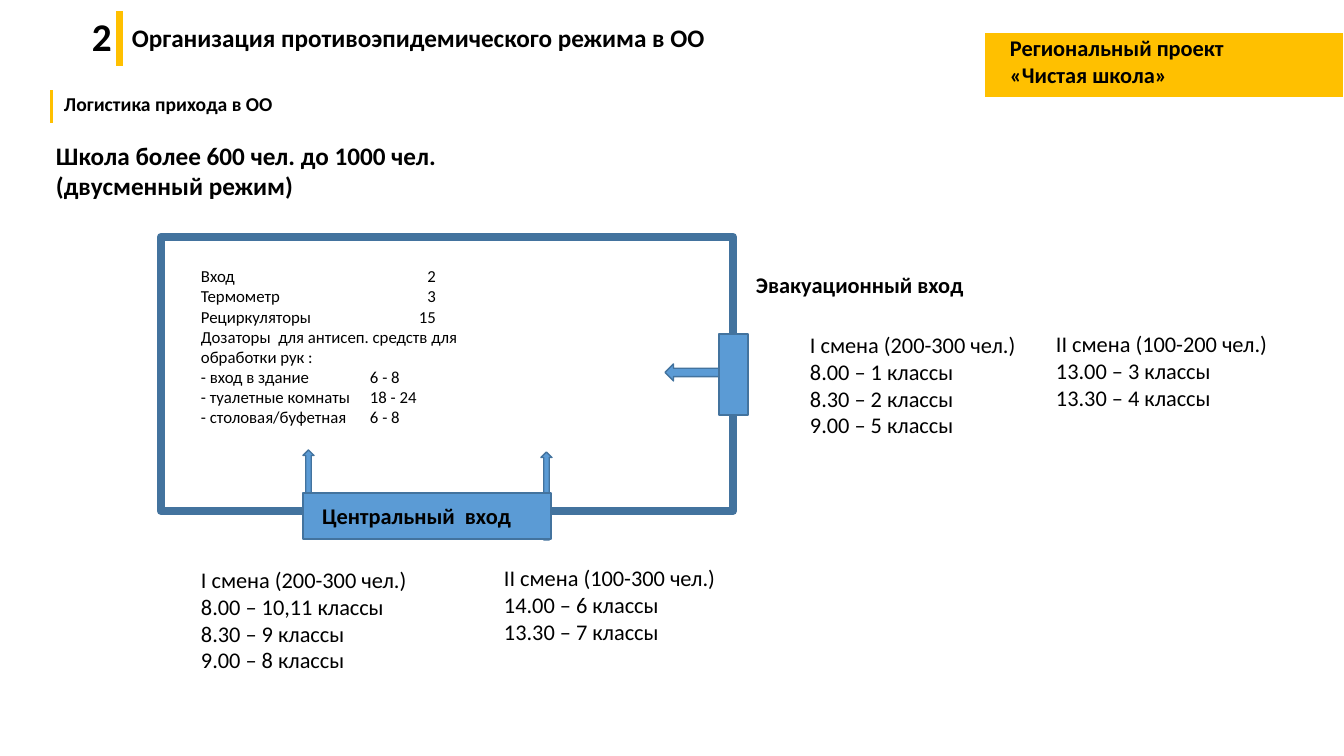
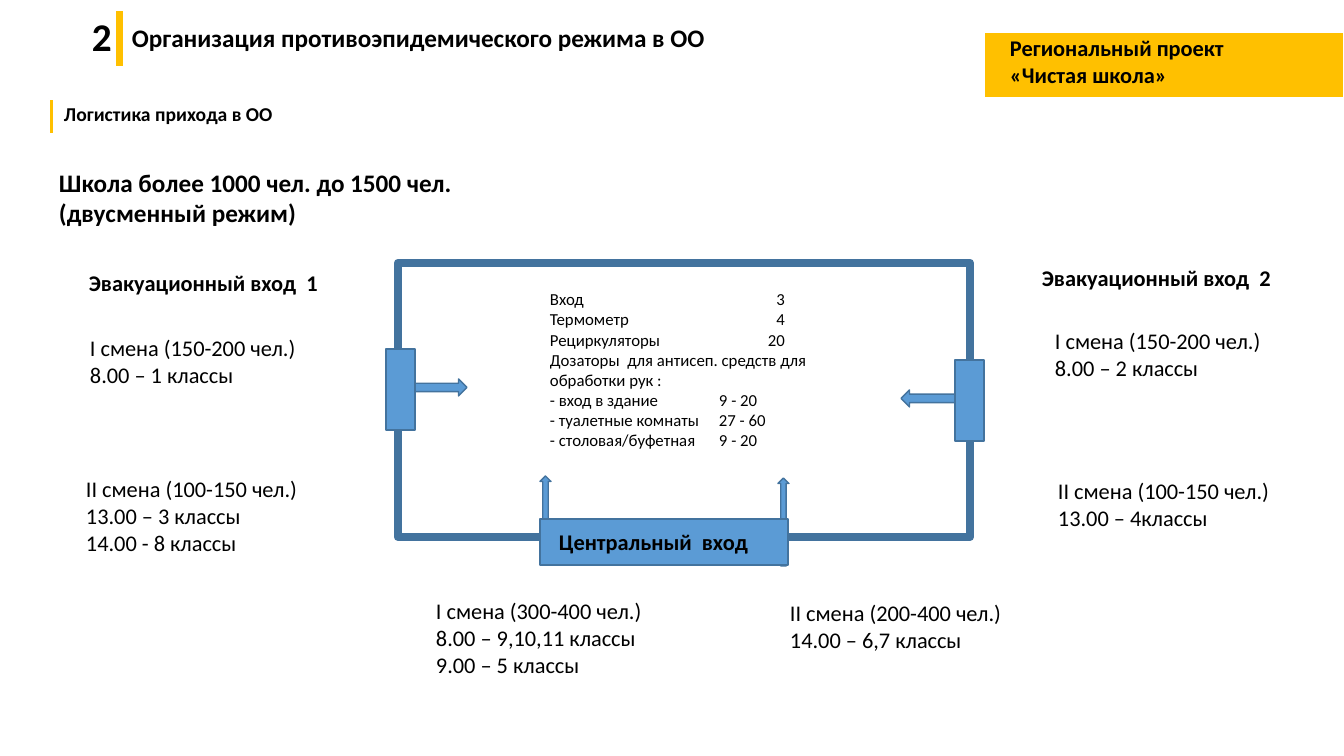
from lxml import etree
from pptx import Presentation
from pptx.dml.color import RGBColor
from pptx.enum.shapes import MSO_SHAPE
from pptx.enum.text import MSO_ANCHOR, PP_ALIGN
from pptx.oxml.ns import qn
from pptx.util import Emu, Pt

PX = 914400 / 100.8
WIDTH, HEIGHT = 1344, 756
RECT = MSO_SHAPE.RECTANGLE
UP, LEFT, RIGHT = MSO_SHAPE.UP_ARROW, MSO_SHAPE.LEFT_ARROW, MSO_SHAPE.RIGHT_ARROW
TOP, MIDDLE = MSO_ANCHOR.TOP, MSO_ANCHOR.MIDDLE
ALIGN_LEFT = PP_ALIGN.LEFT
FONT = "Calibri"
COLORS = {"white": "FFFFFF", "text": "000000", "accent": "FFC000",
          "blue": "5B9BD5", "outline": "43739E"}


def px(n):
    return Emu(round(n * PX))


def color(name):
    return RGBColor.from_string(COLORS[name])


class Deck:
    """Shared style and the slide being built."""

    def __init__(self):
        self.prs = Presentation()
        self.prs.slide_width, self.prs.slide_height = px(WIDTH), px(HEIGHT)
        self.slide = None

    def new_slide(self, subtitle_y):
        """Add a slide with the header and the section subtitle."""
        self.slide = self.prs.slides.add_slide(self.prs.slide_layouts[6])
        badge = self.box(RECT, 984, 32, WIDTH - 984, 66, "accent", "white", 1.5)
        self.fill_text(badge, ["Региональный проект", "«Чистая школа»"],
                       16, True, TOP, 26, 2)
        self.text(122, 17, 611, ["Организация противоэпидемического режима в ОО"],
                  18, True)
        self.box(RECT, 115, 10, 9, 57, "accent", "white", 1.5)
        self.text(82, 7, 44, ["2"], 28, True)
        self.box(RECT, 49, subtitle_y, 5, 35, "accent", "white", 1.5)
        self.text(54, subtitle_y - 2, 267, ["Логистика прихода в ОО"], 14, True)

    def box(self, kind, x, y, w, h, fill="blue", line="outline", weight=1):
        sp = self.slide.shapes.add_shape(kind, px(x), px(y), px(w), px(h))
        sp.shadow.inherit = False
        sp.fill.solid()
        sp.fill.fore_color.rgb = color(fill)
        sp.line.color.rgb = color(line)
        sp.line.width = Pt(weight)
        return sp

    def fill_text(self, sp, lines, size, bold, anchor=TOP, left=10, top=5):
        tf = sp.text_frame
        tf.word_wrap = True
        tf.vertical_anchor = anchor
        tf.margin_left, tf.margin_top = px(left), px(top)
        for i, line in enumerate(lines):
            p = tf.add_paragraph() if i else tf.paragraphs[0]
            p.text = line
            p.alignment = ALIGN_LEFT
            for r in p.runs:
                r.font.name = FONT
                r.font.size = Pt(size)
                r.font.bold = bold
                r.font.color.rgb = color("text")

    def text(self, x, y, w, lines, size=16, bold=False):
        h = round(len(lines) * size * 1.7) + 10
        sp = self.slide.shapes.add_textbox(px(x), px(y), px(w), px(h))
        self.fill_text(sp, lines, size, bold)
        return sp

    def building(self, x, y):
        """Draw the walls and the central entrance."""
        self.box(RECT, x, y, 572, 274, "white", "outline", 6)
        for dx, dy in ((142, 213), (380, 215)):
            self.box(UP, x + dx, y + dy, 11, 88)
        entrance = self.box(RECT, x + 142, y + 256, 248, 46)
        self.fill_text(entrance, ["Центральный  вход"], 16, True, MIDDLE, 19)

    def side_door(self, x, y, arrow):
        """Draw a door whose arrow points into the building."""
        arrow_x = x if arrow == RIGHT else x - 54
        self.box(arrow, arrow_x, y + 30, 81, 17)
        self.box(RECT, x, y, 29, 81)

    def equipment(self, x, y, counts, dispensers):
        """List the equipment, with the numbers set on tab stops."""
        names = ("Вход", "Термометр", "Рециркуляторы")
        places = ("- вход в здание", "- туалетные комнаты", "- столовая/буфетная")
        lines = [f"{name}\t{n}" for name, n in zip(names, counts)]
        lines.append("Дозаторы  для антисеп. средств для обработки рук :")
        lines += [f"{place}\t{n}" for place, n in zip(places, dispensers)]
        sp = self.text(x, y, 327, lines, 12)
        for i, p in enumerate(sp.text_frame.paragraphs):
            pos, align = (235, "r") if i < len(names) else (169, "l")
            tabs = etree.SubElement(p._p.get_or_add_pPr(), qn("a:tabLst"))
            etree.SubElement(tabs, qn("a:tab"), pos=str(px(pos)), algn=align)

    def shifts(self, *blocks):
        """Place timetables given as (x, y, lines)."""
        for x, y, lines in blocks:
            self.text(x, y, 242, lines)


def two_entrances(deck):
    deck.new_slide(89)
    deck.text(46, 135, 448, ["Школа более 600 чел. до 1000 чел.",
                             "(двусменный режим)"], 18, True)
    deck.building(161, 237)
    deck.side_door(719, 334, LEFT)
    deck.equipment(191, 261, (2, 3, 15), ("6 - 8", "18 - 24", "6 - 8"))
    deck.text(746, 266, 238, ["Эвакуационный вход"], 16, True)
    deck.shifts(
        (800, 326, ["I смена (200-300 чел.)", "8.00 – 1 классы",
                    "8.30 – 2 классы", "9.00 – 5 классы"]),
        (1046, 325, ["II смена (100-200 чел.)", "13.00 – 3 классы",
                     "13.30 – 4 классы"]),
        (191, 561, ["I смена (200-300 чел.)", "8.00 – 10,11 классы",
                    "8.30 – 9 классы", "9.00 – 8 классы"]),
        (494, 559, ["II смена (100-300 чел.)", "14.00 – 6 классы",
                    "13.30 – 7 классы"]),
    )


def three_entrances(deck):
    deck.new_slide(99)
    deck.text(49, 162, 569, ["Школа более 1000 чел. до 1500 чел.",
                             "(двусменный режим)"], 18, True)
    deck.building(398, 263)
    deck.side_door(386, 349, RIGHT)
    deck.side_door(955, 360, LEFT)
    deck.equipment(540, 284, (3, 4, 20), ("9 - 20", "27 - 60", "9 - 20"))
    deck.text(79, 264, 279, ["Эвакуационный вход  1"], 16, True)
    deck.text(1032, 259, 279, ["Эвакуационный вход  2"], 16, True)
    deck.shifts(
        (80, 329, ["I смена (150-200 чел.)", "8.00 – 1 классы"]),
        (76, 470, ["II смена (100-150 чел.)", "13.00 – 3 классы",
                   "14.00 - 8 классы"]),
        (1045, 322, ["I смена (150-200 чел.)", "8.00 – 2 классы"]),
        (1048, 472, ["II смена (100-150 чел.)", "13.00 – 4классы"]),
        (426, 592, ["I смена (300-400 чел.)", "8.00 – 9,10,11 классы",
                    "9.00 – 5 классы"]),
        (780, 594, ["II смена (200-400 чел.)", "14.00 – 6,7 классы"]),
    )


def main():
    deck = Deck()
    two_entrances(deck)
    three_entrances(deck)
    deck.prs.save("out.pptx")


if __name__ == "__main__":
    main()
